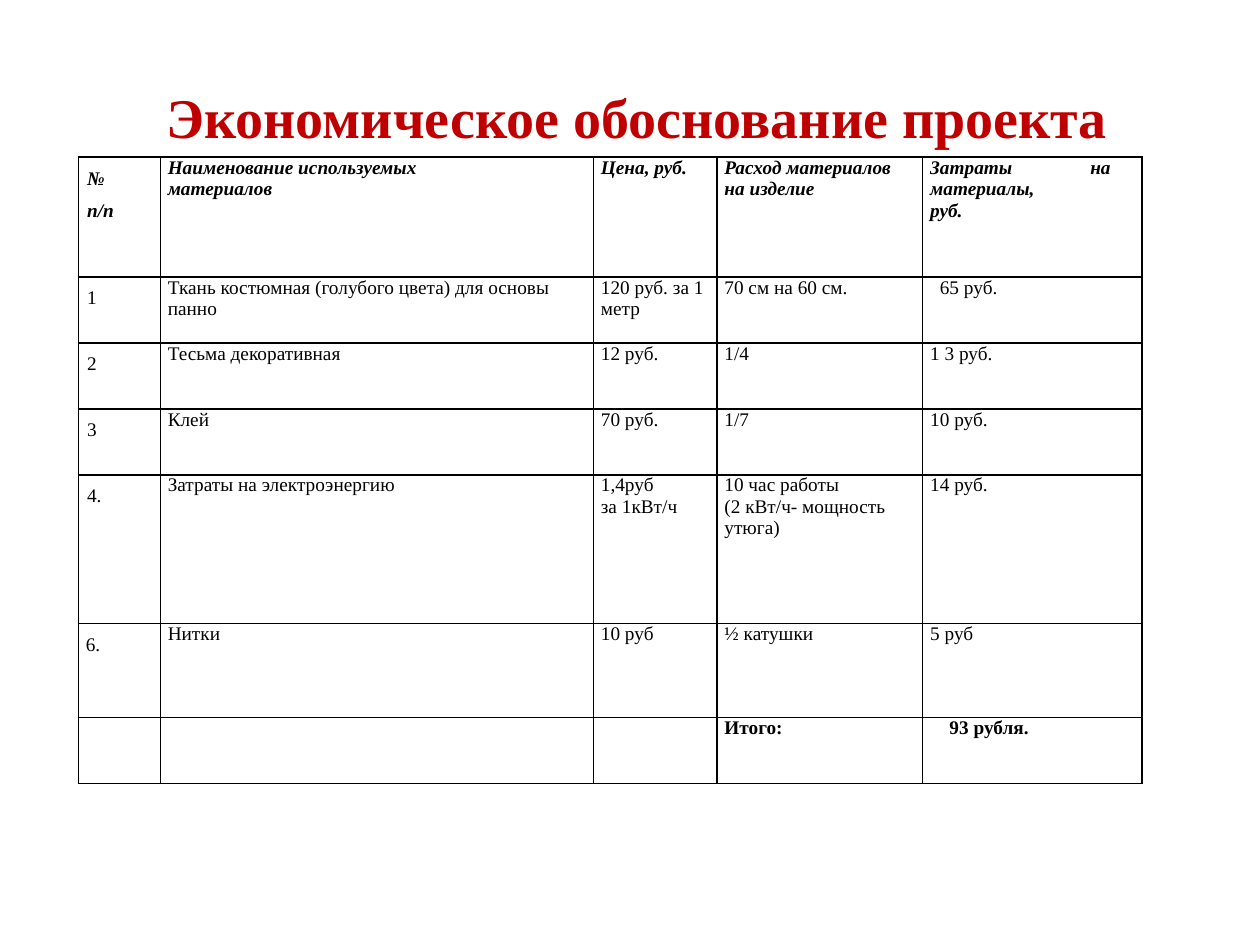
from lxml import etree
from pptx import Presentation
from pptx import util as u
from pptx.dml.color import RGBColor
from pptx.enum import text
from pptx.oxml.ns import qn

Pt = u.Pt
RED = RGBColor(0xC0, 0x00, 0x00)
BLACK = RGBColor(0x00, 0x00, 0x00)
FONT = "Times New Roman"

COLUMN_WIDTHS = [46.8, 247.5, 70.6, 117.6, 125.3]
ROW_HEIGHTS = [68.5, 37.7, 37.7, 37.7, 85.1, 53.7, 37.7]
ROWS = [
    ["№\nп/п", "Наименование используемых\nматериалов", "Цена, руб.",
     "Расход материалов\nна изделие", "Затраты\tна\nматериалы,\nруб."],
    ["1", "Ткань костюмная (голубого цвета) для основы панно",
     "120 руб. за 1 метр", "70 см на 60 см.", "65 руб."],
    ["2", "Тесьма декоративная", "12 руб.", "1/4", "1 3 руб."],
    ["3", "Клей", "70 руб.", "1/7", "10 руб."],
    ["4.", "Затраты на электроэнергию", "1,4руб\nза 1кВт/ч",
     "10 час работы\n(2 кВт/ч- мощность утюга)", "14 руб."],
    ["6.", "Нитки", "10 руб", "½ катушки", "5 руб"],
    ["", "", "", "Итого:", "93 рубля."],
]
HEADER_ROW, TOTAL_ROW = 0, len(ROWS) - 1
# Left indents of single cells, by row and column
INDENTS = {(1, 4): 5.5, (TOTAL_ROW, 4): 11}
INDENTS.update({(row, 0): 0.7 for row in range(5)})
HEADER_TAB = 91.5

CELL_FORMAT = {"margin_left": Pt(4.3), "margin_right": Pt(4.3),
               "margin_top": 0, "margin_bottom": 0}
TITLE_FORMAT = {"word_wrap": True, "vertical_anchor": text.MSO_ANCHOR.MIDDLE,
                "margin_left": Pt(15.2), "margin_right": Pt(7.2)}


def apply_format(target, values):
    for name, value in values.items():
        setattr(target, name, value)


def add_run(paragraph, words, size, color, bold=False, italic=False):
    run = paragraph.add_run()
    run.text = words
    apply_format(run.font, {"name": FONT, "size": Pt(size),
                            "bold": bold, "italic": italic})
    run.font.color.rgb = color


def add_title(slide, left, top, width, height):
    shape = slide.shapes.add_textbox(Pt(left), Pt(top), Pt(width), Pt(height))
    apply_format(shape.text_frame, TITLE_FORMAT)
    paragraph = shape.text_frame.paragraphs[0]
    paragraph.alignment = text.PP_ALIGN.CENTER
    add_run(paragraph, "Экономическое обоснование проекта", 32, RED, bold=True)


def set_borders(cell):
    properties = cell._tc.get_or_add_tcPr()
    for side in ("a:lnL", "a:lnR", "a:lnT", "a:lnB"):
        line = etree.SubElement(properties, qn(side), w=str(Pt(1)))
        fill = etree.SubElement(line, qn("a:solidFill"))
        etree.SubElement(fill, qn("a:srgbClr"), val=str(BLACK))


def fill_cell(cell, words, row, column):
    apply_format(cell, CELL_FORMAT)
    set_borders(cell)
    cell.fill.background()
    frame = cell.text_frame
    for number, line in enumerate(words.split("\n") if words else []):
        paragraph = frame.add_paragraph() if number else frame.paragraphs[0]
        properties = paragraph._p.get_or_add_pPr()
        properties.set("marL", str(Pt(INDENTS.get((row, column), 0))))
        if column == 0:
            paragraph.line_spacing = 1.5
        if "\t" in line:
            tabs = etree.SubElement(properties, qn("a:tabLst"))
            etree.SubElement(tabs, qn("a:tab"), pos=str(Pt(HEADER_TAB)), algn="l")
        add_run(paragraph, line, 11, BLACK,
                bold=row in (HEADER_ROW, TOTAL_ROW), italic=row == HEADER_ROW)


def add_cost_table(slide, left, top):
    shape = slide.shapes.add_table(
        len(ROWS), len(COLUMN_WIDTHS), Pt(left), Pt(top),
        Pt(sum(COLUMN_WIDTHS)), Pt(sum(ROW_HEIGHTS)))
    table = shape.table
    apply_format(table, {"first_row": False, "horz_banding": False})
    for column, width in zip(table.columns, COLUMN_WIDTHS):
        column.width = Pt(width)
    for row, height in zip(table.rows, ROW_HEIGHTS):
        row.height = Pt(height)
    for row, entries in enumerate(ROWS):
        for column, words in enumerate(entries):
            fill_cell(table.cell(row, column), words, row, column)


def main():
    presentation = Presentation()
    apply_format(presentation, {"slide_width": Pt(720), "slide_height": Pt(540)})
    slide = presentation.slides.add_slide(presentation.slide_layouts[6])
    # Heading
    add_title(slide, 36, 21.6, 648, 90)
    # Costs of the materials
    add_cost_table(slide, 44.8, 89.8)
    presentation.save("out.pptx")


if __name__ == "__main__":
    main()
